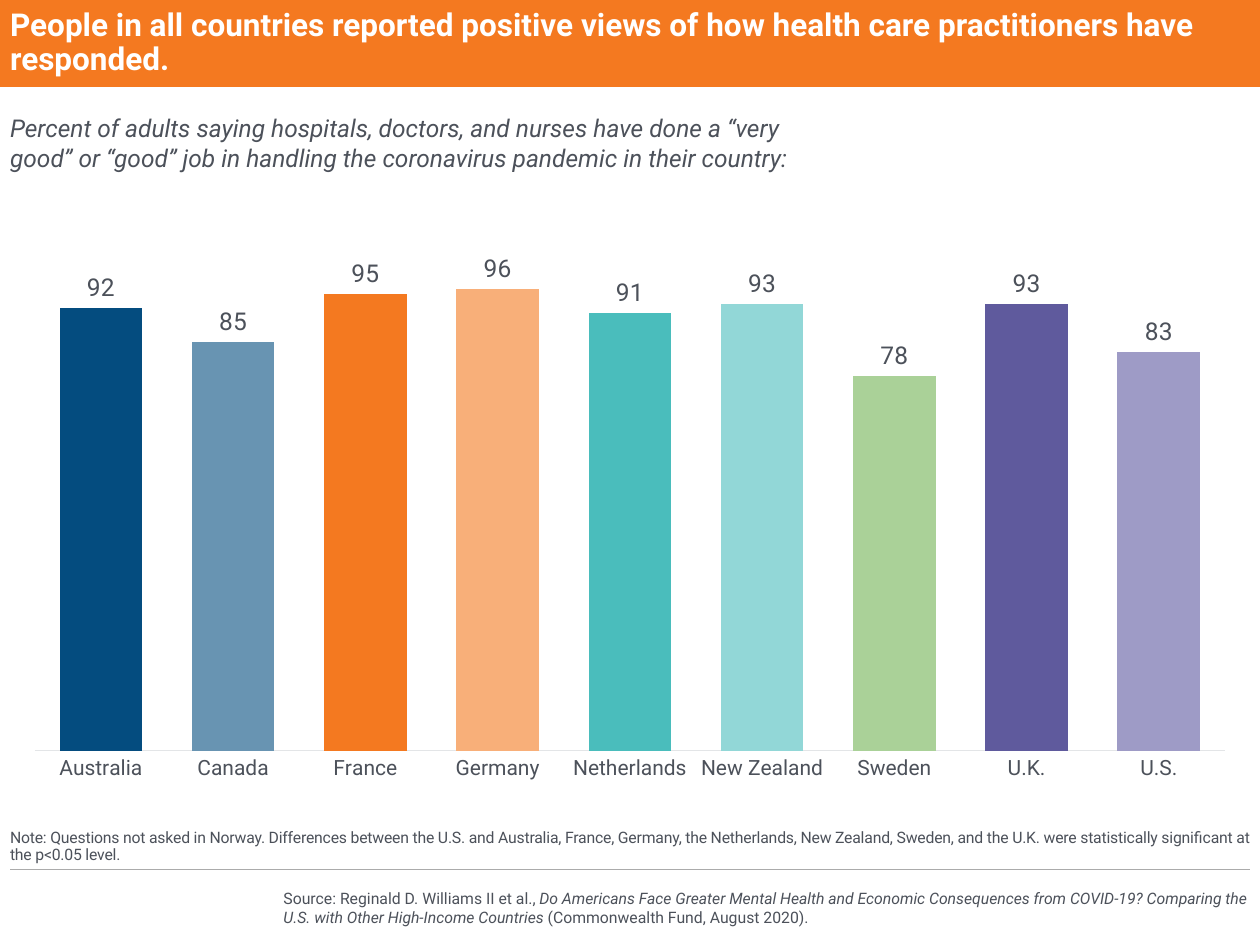
from pptx import Presentation
from pptx.chart.data import CategoryChartData as Data
from pptx.dml.color import RGBColor as RGB
from pptx.enum.chart import XL_CHART_TYPE as Kind, XL_LABEL_POSITION as Place, XL_TICK_MARK as Tick
from pptx.enum.shapes import MSO_CONNECTOR as Link, MSO_SHAPE as Shape
from pptx.enum.text import MSO_ANCHOR as Anchor, MSO_AUTO_SIZE as Fit, PP_ALIGN as Align
from pptx.oxml import parse_xml
from pptx.oxml.ns import nsdecls
from pptx.util import Inches, Pt

INK = "4C515A"
ORANGE = "F47920"
EDGE = 0.08
WIDE = 9.84

BARS = [
    ("Australia", 92, "044C7F"),
    ("Canada", 85, "6894B2"),
    ("France", 95, ORANGE),
    ("Germany", 96, "F8AF79"),
    ("Netherlands", 91, "4ABDBC"),
    ("New Zealand", 93, "92D7D7"),
    ("Sweden", 78, "AAD198"),
    ("U.K.", 93, "5F5A9D"),
    ("U.S.", 83, "9E9BC6"),
]


def paint(item, tone):
    item.fill.solid()
    item.fill.fore_color.rgb = RGB.from_string(tone)


def style(font, size, tone=INK, bold=False, slant=False):
    font.name = "Roboto"
    font.size = Pt(size)
    font.bold = bold
    font.italic = slant
    font.color.rgb = RGB.from_string(tone)


def place(shape, left, top, width, height):
    shape.left, shape.top = Inches(left), Inches(top)
    shape.width, shape.height = Inches(width), Inches(height)


def write(shape, parts, size, tone=INK, bold=False, anchor=Anchor.TOP, fit=Fit.NONE):
    frame = shape.text_frame
    frame.word_wrap = True
    frame.auto_size = fit
    frame.vertical_anchor = anchor
    frame.margin_left = frame.margin_right = 0
    frame.margin_top = frame.margin_bottom = 0
    para = frame.paragraphs[0]
    para.alignment = Align.LEFT
    for words, slant in parts:
        run = para.add_run()
        run.text = words
        style(run.font, size, tone, bold, slant)
    return para


def add_text(slide, box, parts, size, **looks):
    shape = slide.shapes.add_textbox(*map(Inches, box))
    return write(shape, parts, size, **looks)


def add_band(slide):
    band = slide.shapes.add_shape(Shape.RECTANGLE, 0, 0, Inches(10), Inches(0.69))
    band.shadow.inherit = False
    paint(band, ORANGE)
    band.line.fill.background()
    slide.shapes._spTree.insert(2, band._element)


def add_title(slide, words):
    title = slide.shapes.title
    place(title, EDGE, 0, WIDE, 0.69)
    para = write(title, [(words, False)], 18, "FFFFFF", True, Anchor.MIDDLE)
    para.line_spacing = 0.9


def add_rule(slide):
    rule = slide.shapes.add_connector(
        Link.STRAIGHT, Inches(EDGE + WIDE), Inches(6.9), Inches(EDGE), Inches(6.9))
    rule.line.color.rgb = RGB.from_string("ABABAB")
    rule.line.width = Pt(0.75)
    rule._element.spPr.append(parse_xml(f"<a:effectLst {nsdecls('a')}/>"))


def set_plot(chart, left, top, width, height):
    area = chart._chartSpace.chart.plotArea
    for old in area.findall(area.tag.replace("plotArea", "layout")):
        area.remove(old)
    sizes = zip("xywh", (left, top, width, height))
    rows = "".join(f'<c:{key} val="{size}"/>' for key, size in sizes)
    area.insert(0, parse_xml(
        f'<c:layout {nsdecls("c")}><c:manualLayout><c:layoutTarget val="inner"/>'
        f'<c:xMode val="edge"/><c:yMode val="edge"/>{rows}</c:manualLayout></c:layout>'))


def add_bars(slide):
    names, vals, tones = zip(*BARS)
    data = Data()
    data.categories = names
    data.add_series("Series 1", vals)
    box = map(Inches, (EDGE, 1.28, WIDE, 5.03))
    chart = slide.shapes.add_chart(Kind.COLUMN_CLUSTERED, *box, data).chart
    chart.has_legend = False
    chart.has_title = False
    style(chart.font, 14)
    set_plot(chart, 0.02, 0.02, 0.96, 0.91)

    axis = chart.value_axis
    axis.visible = False
    axis.has_major_gridlines = False
    axis.minimum_scale, axis.maximum_scale = 0, 120

    axis = chart.category_axis
    axis.major_tick_mark = axis.minor_tick_mark = Tick.NONE
    axis.format.line.color.rgb = RGB.from_string("E3E5E7")
    axis.format.line.width = Pt(0.75)
    style(axis.tick_labels.font, 12)

    plot = chart.plots[0]
    plot.gap_width = 60
    plot.vary_by_categories = False
    row = plot.series[0]
    paint(row.format, tones[0])
    for spot, tone in enumerate(tones[1:], 1):
        paint(row.points[spot].format, tone)
    tags = row.data_labels
    tags.show_value = True
    tags.position = Place.OUTSIDE_END
    tags.number_format = "General"
    tags.number_format_is_linked = False
    style(tags.font, 14)


def main():
    deck = Presentation()
    deck.slide_width, deck.slide_height = Inches(10), Inches(7.5)
    slide = deck.slides.add_slide(deck.slide_layouts[5])
    add_band(slide)
    add_title(slide, "People in all countries reported positive views of how "
              "health care practitioners have responded.")
    add_rule(slide)
    add_text(slide, (2.25, 7.05, 7.67, 0.3), [
        ("Source: Reginald D. Williams II et al., ", False),
        ("Do Americans Face Greater Mental Health and Economic Consequences from "
         "COVID-19? Comparing the U.S. with Other High-Income Countries ", True),
        ("(Commonwealth Fund, August 2020).", False),
    ], 9, anchor=Anchor.MIDDLE, fit=Fit.SHAPE_TO_FIT_TEXT)
    note = add_text(slide, (EDGE, 6.32, WIDE, 0.54), [
        ("Note: Questions not asked in Norway. Differences between the U.S. and "
         "Australia, France, Germany, the Netherlands, New Zealand, Sweden, and "
         "the U.K. were statistically significant at the p<0.05 level.", False),
    ], 9, anchor=Anchor.BOTTOM)
    note.line_spacing = 0.9
    note.space_after = Pt(6)
    note.runs[0].font._element.set("spc", "-10")
    add_text(slide, (EDGE, 0.9, 6.43, 0.47), [
        ("Percent of adults saying hospitals, doctors, and nurses have done a "
         "“very good” or “good” job in handling the coronavirus pandemic in "
         "their country:", True),
    ], 14, fit=Fit.SHAPE_TO_FIT_TEXT)
    add_bars(slide)
    deck.save("out.pptx")


if __name__ == "__main__":
    main()
